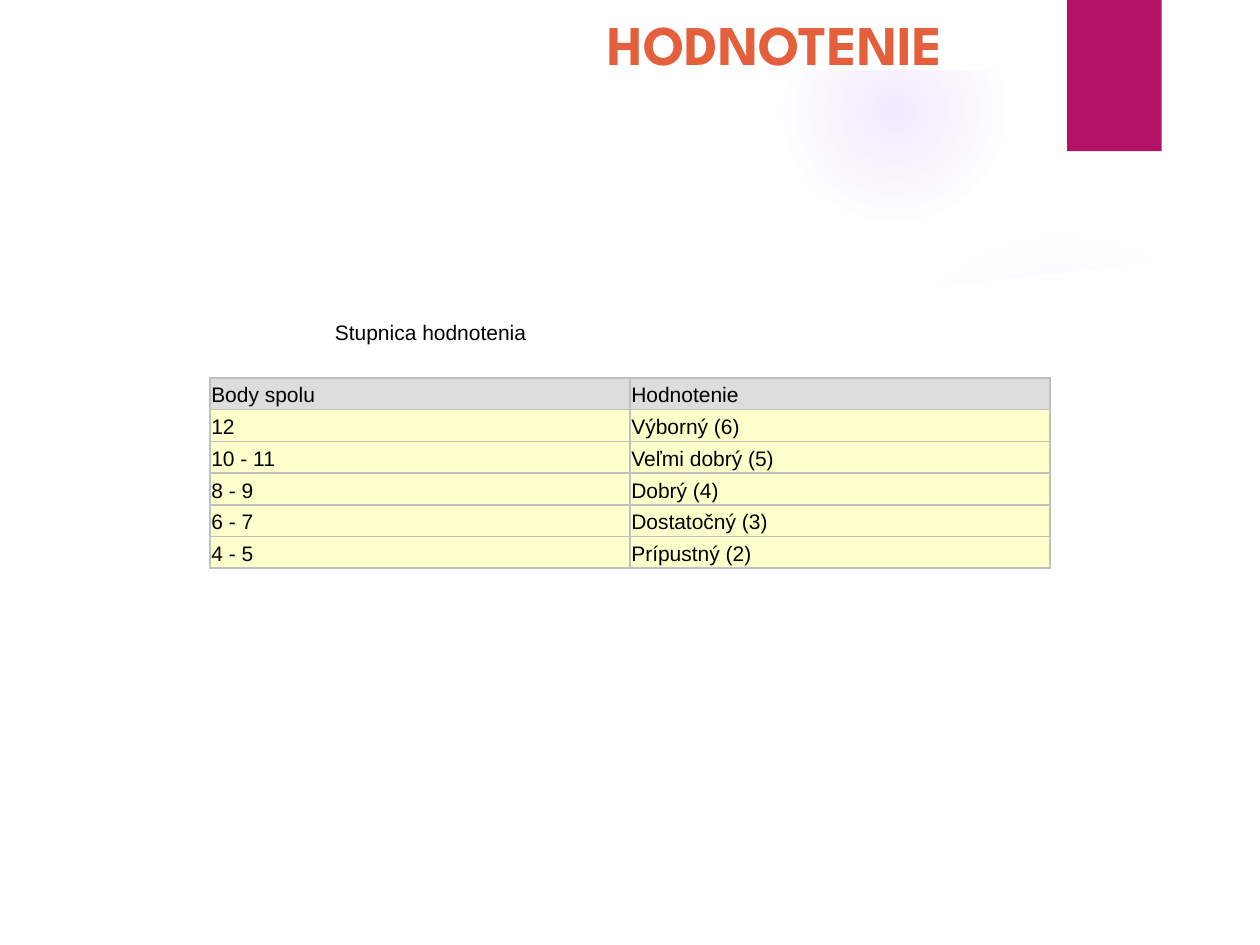
from dataclasses import dataclass

from lxml.etree import SubElement
from pptx import Presentation
from pptx.dml.color import RGBColor
from pptx.enum.shapes import MSO_SHAPE
from pptx.enum.text import MSO_ANCHOR, MSO_AUTO_SIZE, PP_ALIGN
from pptx.oxml.ns import qn
from pptx.util import Inches, Pt


@dataclass(frozen=True)
class Theme:
    paper: str = "FFFFFF"
    glow: str = "9B6BF2"
    ribbon: str = "B31166"
    title: str = "E45F3C"
    ink: str = "000000"
    header: str = "DDDDDD"
    row: str = "FFFFCC"
    border: str = "C0C0C0"
    title_font: str = "League Spartan"
    body_font: str = "Arial"
    title_size: int = 32
    body_size: int = 12


def write_text(tf, text, font, size, color, bold=False, align=None, spacing=None, after=None):
    p = tf.paragraphs[0]
    p.alignment = align
    p.line_spacing = spacing
    p.space_after = after
    r = p.add_run()
    r.text = text
    r.font.name = font
    r.font.size = Pt(size)
    r.font.bold = bold
    r.font.color.rgb = RGBColor.from_string(color)


def add_color(parent, color, alpha):
    clr = SubElement(parent, qn("a:srgbClr"), val=color)
    SubElement(clr, qn("a:alpha"), val=str(alpha * 1000))


class SlideBuilder:
    COLS = 100

    def __init__(self, prs, theme):
        self.theme = theme
        self.unit = prs.slide_width / self.COLS
        self.s = prs.slides.add_slide(prs.slide_layouts[5])

    def grid(self, *values):
        return [round(v * self.unit) for v in values]

    def paint(self, sp, color, alpha=100):
        sp.shadow.inherit = False
        sp.line.fill.background()
        sp.fill.solid()
        sp.fill.fore_color.rgb = RGBColor.from_string(color)
        if alpha < 100:
            clr = sp.fill.fore_color.rgb and sp.element.spPr.find(qn("a:solidFill"))[0]
            SubElement(clr, qn("a:alpha"), val=str(alpha * 1000))

    def rectangle(self, box, color):
        self.paint(self.s.shapes.add_shape(MSO_SHAPE.RECTANGLE, *self.grid(*box)), color)

    def glow(self, col, row, size, stops):
        sp = self.s.shapes.add_shape(MSO_SHAPE.OVAL, *self.grid(col, row, size, size))
        self.paint(sp, self.theme.glow)
        spPr = sp.element.spPr
        grad = SubElement(spPr, qn("a:gradFill"))
        gs_list = SubElement(grad, qn("a:gsLst"))
        for pos, alpha in stops:
            add_color(SubElement(gs_list, qn("a:gs"), pos=str(pos * 1000)), self.theme.glow, alpha)
        circle = SubElement(grad, qn("a:path"), path="circle")
        SubElement(circle, qn("a:fillToRect"), l="50000", t="50000", r="50000", b="50000")
        spPr.replace(spPr.find(qn("a:solidFill")), grad)

    def outline(self, contours, color, alpha=100):
        first, *others = [[self.grid(*pt) for pt in c] for c in contours]
        fb = self.s.shapes.build_freeform(*first[0], scale=1.0)
        fb.add_line_segments(first[1:], close=True)
        for contour in others:
            fb.move_to(*contour[0])
            fb.add_line_segments(contour[1:], close=True)
        self.paint(fb.convert_to_shape(), color, alpha)

    def title(self, text, box):
        t = self.theme
        sp = self.s.shapes.title
        sp.left, sp.top, sp.width, sp.height = self.grid(*box)
        sp.element.getparent().append(sp.element)
        tf = sp.text_frame
        tf.auto_size = MSO_AUTO_SIZE.NONE
        tf.vertical_anchor = MSO_ANCHOR.MIDDLE
        write_text(tf, text, t.title_font, t.title_size, t.title, bold=True, align=PP_ALIGN.LEFT)

    def label(self, text, box):
        t = self.theme
        tf = self.s.shapes.add_textbox(*self.grid(*box)).text_frame
        tf.word_wrap = False
        tf.auto_size = MSO_AUTO_SIZE.SHAPE_TO_FIT_TEXT
        write_text(tf, text, t.body_font, t.body_size, t.ink)

    def table(self, rows, box):
        t = self.theme
        tbl = self.s.shapes.add_table(len(rows), len(rows[0]), *self.grid(*box)).table
        tbl.first_row = tbl.horz_banding = False
        for i, row in enumerate(rows):
            for j, text in enumerate(row):
                self.cell(tbl.cell(i, j), text, t.row if i else t.header)

    def cell(self, cell, text, fill):
        t = self.theme
        cell.margin_left = cell.margin_right = Inches(0.01)
        cell.margin_top = cell.margin_bottom = Inches(0.01)
        cell.vertical_anchor = MSO_ANCHOR.MIDDLE
        tcPr = cell._tc.get_or_add_tcPr()
        for side in ("a:lnL", "a:lnR", "a:lnT", "a:lnB"):
            ln = SubElement(tcPr, qn(side), w=str(Pt(1)))
            add_color(SubElement(ln, qn("a:solidFill")), t.border, 100)
        cell.fill.solid()
        cell.fill.fore_color.rgb = RGBColor.from_string(fill)
        write_text(cell.text_frame, text, t.body_font, t.body_size, t.ink,
                   align=PP_ALIGN.JUSTIFY, spacing=1.15, after=Pt(10))


def main():
    prs = Presentation()
    prs.slide_width, prs.slide_height = Inches(10), Inches(7.5)
    theme = Theme()
    b = SlideBuilder(prs, theme)

    b.glow(68.9, 18.3, 30.8, [(0, 7), (36, 6), (69, 0)])
    b.glow(62.2, 0, 17.5, [(0, 14), (36, 7), (73, 0)])

    swoosh = [(69.9, 23.4), (77, 23.2), (86, 22.2), (95.6, 20.8), (95.1, 17.4), (90.1, 19),
              (85, 20.3), (80.1, 21.3), (75.4, 22.1), (69.6, 22.9)]
    b.outline([swoosh], theme.paper, alpha=20)

    panel = [(5.3, 20.3), (5.3, 69.9), (94.7, 69.9), (94.7, 20.3), (86.6, 21.4), (78.5, 22.3),
             (70.4, 22.9), (62.5, 23.3), (54.8, 23.4), (47.4, 23.4), (40.4, 23.3), (33.8, 23),
             (27.7, 22.6), (22.2, 22.2), (13.2, 21.3)]
    b.outline([panel], theme.paper)

    frame_outer = [(0, 0), (0, 75), (100, 75), (100, 0)]
    frame_inner = [(94.5, 69.5), (5.6, 69.5), (5.6, 5.6), (94.5, 5.6)]
    b.outline([frame_outer, frame_inner], theme.paper)

    b.rectangle((84.7, 0, 7.5, 12), theme.ribbon)
    b.title("HODNOTENIE", (47.2, 0.4, 52.8, 6.1))
    b.table([
        ("Body spolu", "Hodnotenie"),
        ("12", "Výborný (6)"),
        ("10 - 11", "Veľmi dobrý (5)"),
        ("8 - 9", "Dobrý (4)"),
        ("6 - 7", "Dostatočný (3)"),
        ("4 - 5", "Prípustný (2)"),
    ], (16.67, 30, 66.67, 15.1))
    b.label("Stupnica hodnotenia", (25.6, 24.9, 17.3, 3))

    prs.save("out.pptx")


if __name__ == "__main__":
    main()
